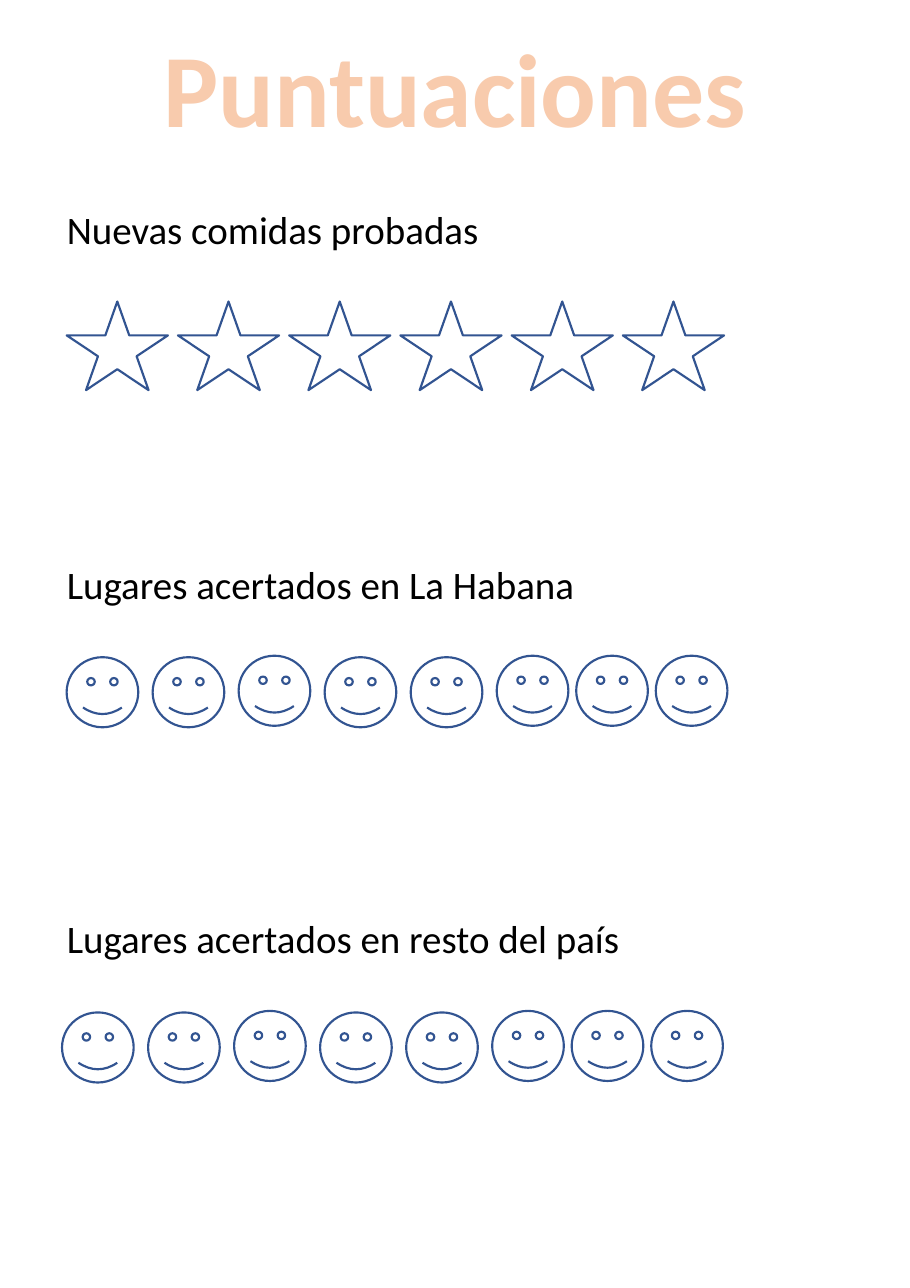
from dataclasses import dataclass

from lxml.etree import SubElement
from pptx import Presentation
from pptx.dml.color import RGBColor
from pptx.enum.shapes import MSO_SHAPE as Shape
from pptx.enum.text import MSO_ANCHOR as Anchor, MSO_AUTO_SIZE as AutoSize, PP_ALIGN as Align
from pptx.oxml.ns import qn
from pptx.slide import Slide
from pptx.text.text import TextFrame
from pptx.util import Pt

COLORS = {"title": "F8CBAD", "title_line": "ED7D31", "text": "000000", "mark": "325491"}
FONT = "Calibri"
Offsets = tuple[tuple[float, float], ...]

STARS: Offsets = tuple((51.4 * i, 0) for i in range(6))
FACES: Offsets = tuple(
    (39.75 * i - 3 * max(i - 5, 0), -0.7 if i in (2, 5, 6, 7) else 0) for i in range(8)
)


@dataclass(frozen=True)
class ScoreRow:
    """A heading and the marks to colour in below it."""

    heading: str
    heading_top: float
    heading_width: float
    mark: Shape
    left: float
    top: float
    width: float
    height: float
    offsets: Offsets


ROWS = (
    ScoreRow("Nuevas comidas probadas", 91.4, 206.6, Shape.STAR_5_POINT,
             30.8, 139.4, 46.8, 41, STARS),
    ScoreRow("Lugares acertados en La Habana", 255.6, 252, Shape.SMILEY_FACE,
             30.8, 303.8, 33.1, 32.4, FACES),
    ScoreRow("Lugares acertados en resto del país", 419, 272.9, Shape.SMILEY_FACE,
             28.7, 468, 33.1, 32.4, FACES),
)


def rgb(name: str) -> RGBColor:
    """Return a named colour."""
    return RGBColor.from_string(COLORS[name])


def write(tf: TextFrame, text: str, size: float, color: str, bold: bool, align: Align):
    """Write one formatted run and return it."""
    tf.word_wrap = False
    tf.auto_size = AutoSize.SHAPE_TO_FIT_TEXT
    tf.vertical_anchor = Anchor.TOP
    p = tf.paragraphs[0]
    p.alignment = align
    r = p.add_run()
    r.text = text
    r.font.name = FONT
    r.font.size = Pt(size)
    r.font.bold = bold
    r.font.color.rgb = rgb(color)
    return r


def add_title(s: Slide) -> None:
    """Fill the title placeholder with outlined letters."""
    sp = s.shapes.title
    sp.left, sp.top, sp.width, sp.height = Pt(67), Pt(7.2), Pt(286.6), Pt(65.5)
    r = write(sp.text_frame, "Puntuaciones", 48, "title", True, Align.CENTER)
    props = r.font._element
    ln = SubElement(props, qn("a:ln"), w=str(Pt(1.75)))
    fill = SubElement(ln, qn("a:solidFill"))
    SubElement(fill, qn("a:srgbClr"), val=COLORS["title_line"])
    props.insert(0, ln)


def add_row(s: Slide, row: ScoreRow) -> None:
    """Draw a heading and its marks."""
    box = s.shapes.add_textbox(Pt(23.8), Pt(row.heading_top), Pt(row.heading_width), Pt(29))
    write(box.text_frame, row.heading, 18, "text", False, Align.LEFT)
    for dx, dy in row.offsets:
        sp = s.shapes.add_shape(row.mark, Pt(row.left + dx), Pt(row.top + dy),
                                Pt(row.width), Pt(row.height))
        sp.shadow.inherit = False
        sp.fill.background()
        sp.line.color.rgb = rgb("mark")
        sp.line.width = Pt(1)


def main() -> None:
    """Build and save the score sheet."""
    prs = Presentation()
    prs.slide_width, prs.slide_height = Pt(420.5), Pt(595.4)
    s = prs.slides.add_slide(prs.slide_layouts[5])
    add_title(s)
    for row in ROWS:
        add_row(s, row)
    prs.save("out.pptx")


if __name__ == "__main__":
    main()
